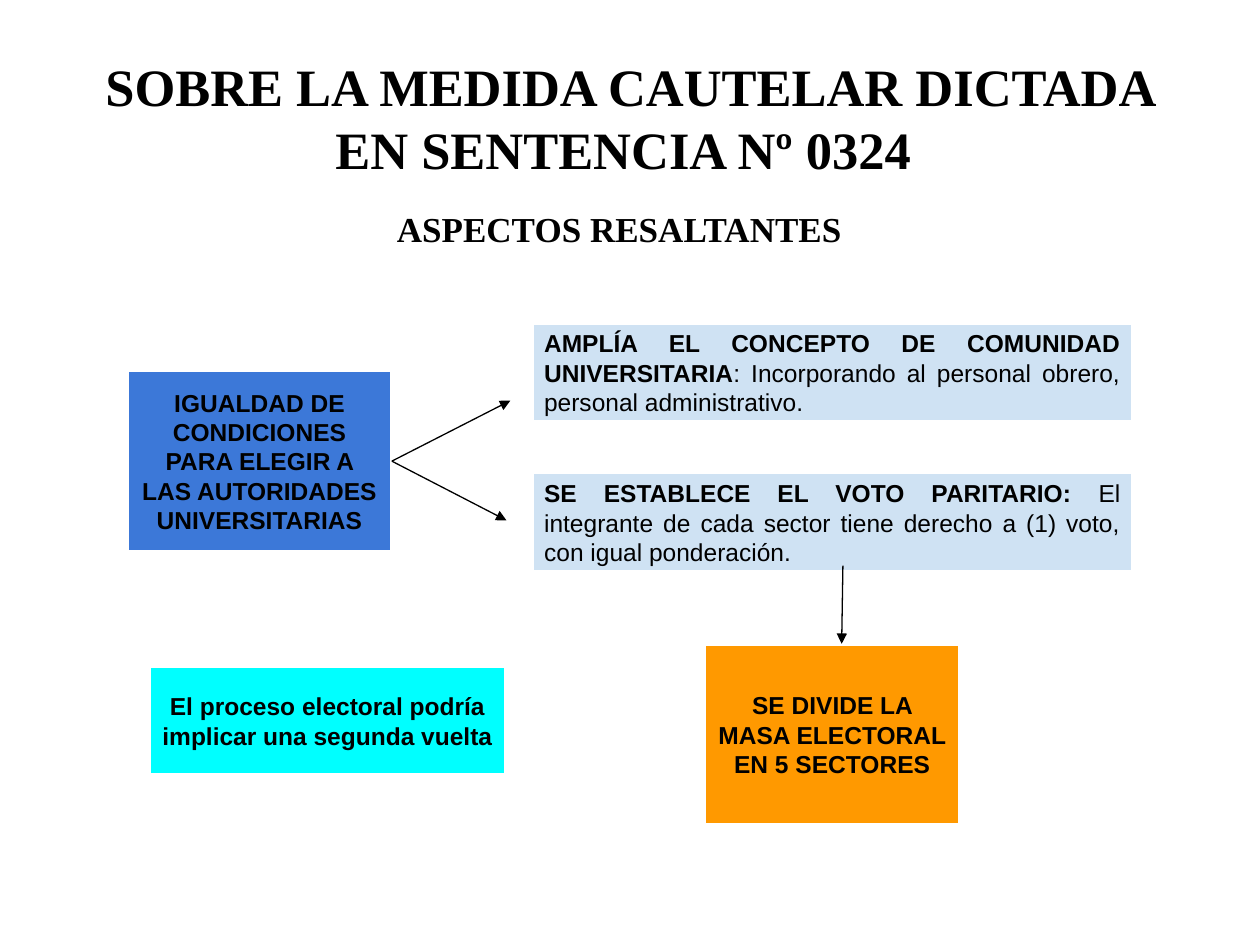
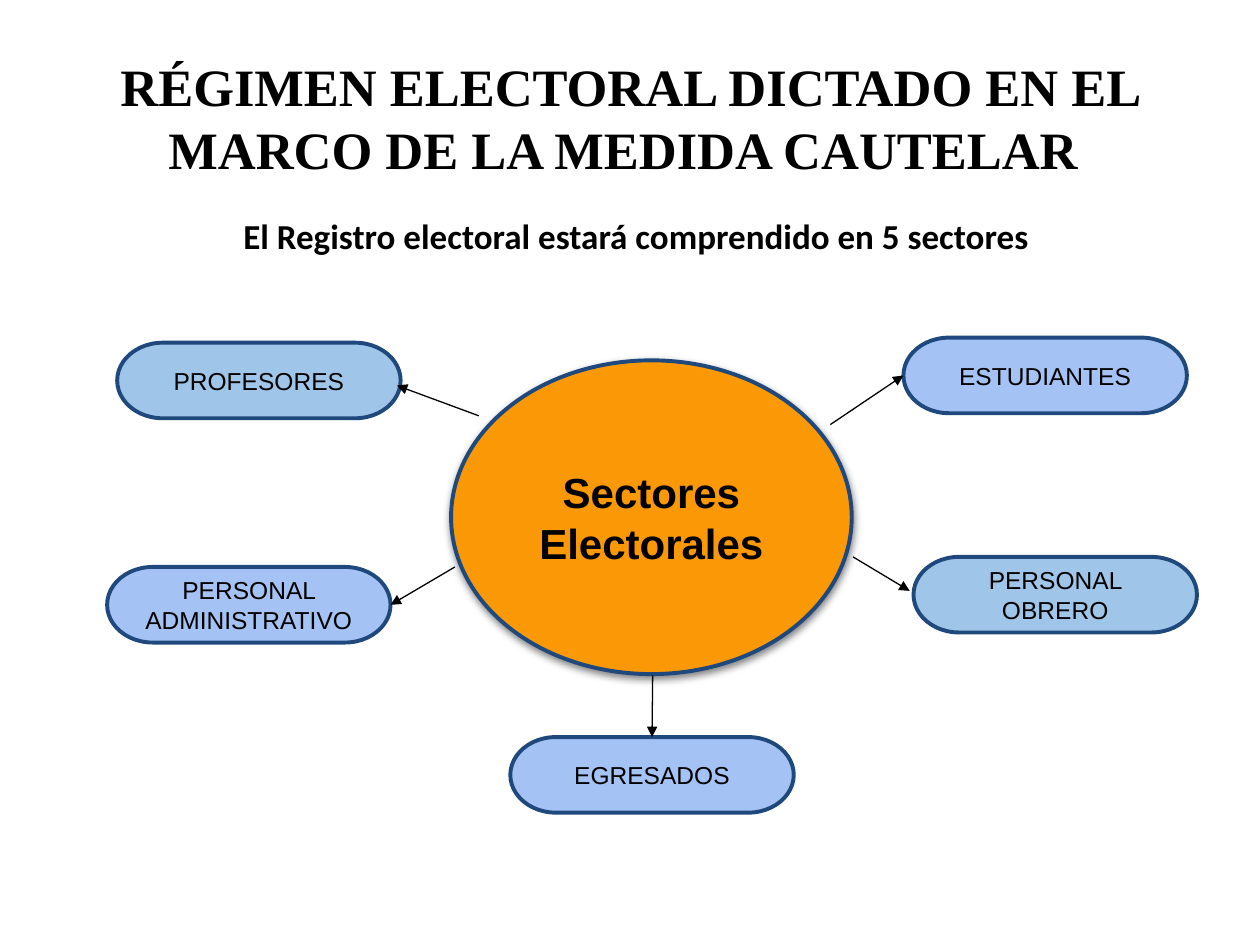
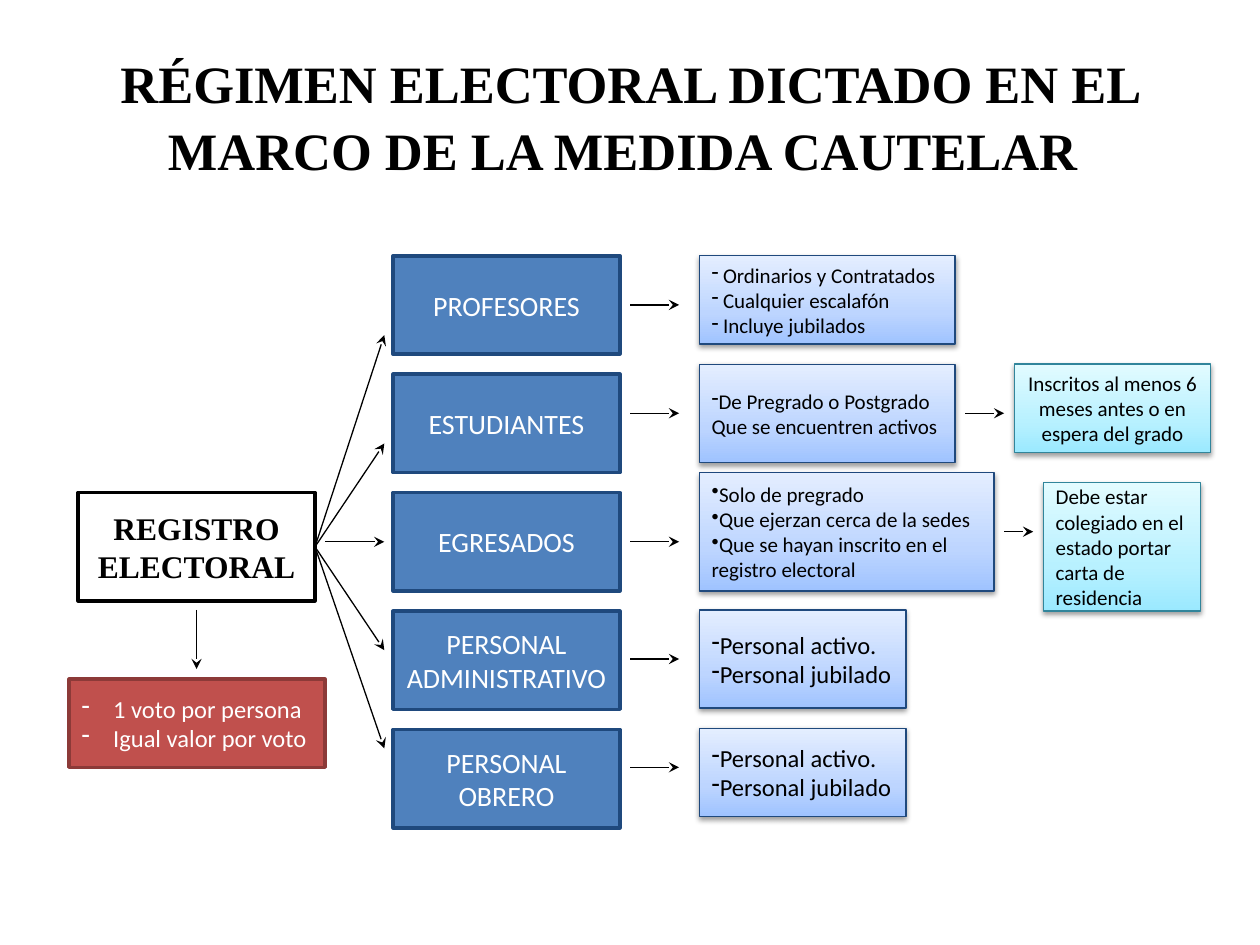
from collections import namedtuple
from dataclasses import dataclass

from lxml.etree import SubElement
from pptx import Presentation
from pptx.dml.color import RGBColor
from pptx.enum.shapes import MSO_CONNECTOR, MSO_SHAPE as Preset
from pptx.enum.text import MSO_ANCHOR as Anchor, PP_ALIGN as Align
from pptx.oxml.ns import qn
from pptx.util import Emu, Pt

PX = 9144  # 100 px to the inch
TOP, LEFT, BOTTOM, RIGHT = range(4)

Type = namedtuple("Type", "font size color bold")
Gradient = namedtuple("Gradient", "low middle high")
Shadow = namedtuple("Shadow", "alpha blur distance")
Bullet = namedtuple("Bullet", "sign margin indent")
Look = namedtuple("Look", "fill line weight shadow alpha", defaults=(None, 100))
Joint = namedtuple("Joint", "shape side")


@dataclass(frozen=True)
class Box:
    left: int
    top: int
    width: int
    height: int

    def inner(self, x, y, width, height):
        return Box(self.left + x, self.top + y, width, height)

    def point(self, x, y):
        return self.left + x, self.top + y

    def emu(self):
        return [Emu(n * PX) for n in (self.left, self.top, self.width, self.height)]


class Theme:
    black, white, navy = "000000", "FFFFFF", "1F497D"
    title = Type("Times New Roman", 30, black, True)
    title_end = title._replace(size=32)
    subtitle = title._replace(size=20)
    register = title._replace(size=18)
    strong = Type("Arial", 14, black, True)
    plain = strong._replace(bold=False)
    hub = strong._replace(size=24)
    lead = Type("Calibri", 20, black, True)
    sector = Type("Calibri", 16, white, False)
    vote = sector._replace(size=14)
    detail = Type("Calibri", 12, black, False)
    large_detail = detail._replace(size=14)

    equality = Look("3C78D8", white, 2.25)
    concept = Look("CFE2F3", white, 2.25)
    division = Look("FF9900", white, 2.25)
    runoff = Look("00FFFF", white, 2.25)
    sky = Look("9FC5E8", navy, 2.25)
    periwinkle = Look("A4C2F4", navy, 2.25)
    hub_look = Look("FF9900", navy, 2.25, Shadow(50, 4.5, 1.5), 96)
    register_look = Look(white, black, 2)
    sector_look = Look("4F81BD", navy, 2)
    vote_look = Look("C0504D", "8C3A38", 2)
    soft = Shadow(38, 3.1, 1.6)
    detail_look = Look(Gradient("9FC3FF", "BDD5FF", "E4EEFF"), navy, 0.75, soft)
    note_look = Look(Gradient("9BE9FF", "B8F1FF", "E2FBFF"), "31859B", 0.75, soft)

    dash = Bullet("-", 0, -8)
    spaced_dash = Bullet("-", 9, -9)
    large_dash = Bullet("-", 0, -10)
    vote_dash = Bullet("-", 25, -25)
    dot = Bullet("•", 0, -8)


def add_bullet(para, bullet, color):
    props = para._p.get_or_add_pPr()
    props.set("marL", str(bullet.margin * PX))
    props.set("indent", str(bullet.indent * PX))
    SubElement(SubElement(props, qn("a:buClr")), qn("a:srgbClr"), val=color)
    SubElement(props, qn("a:buChar"), char=bullet.sign)


def write(shape, paras, align=Align.CENTER, pad=10, anchor=Anchor.MIDDLE):
    """Fill a shape; each paragraph is (bullet or None, [(text, type), ...])."""
    frame = shape.text_frame
    frame.word_wrap = True
    frame.vertical_anchor = anchor
    frame.margin_left = frame.margin_right = Emu(10 * PX)
    frame.margin_top = frame.margin_bottom = Emu(pad * PX)
    for index, (bullet, runs) in enumerate(paras):
        para = frame.add_paragraph() if index else frame.paragraphs[0]
        para.alignment = align
        if bullet:
            add_bullet(para, bullet, runs[0][1].color)
        for text, kind in runs:
            span = para.add_run()
            span.text = text
            span.font.name, span.font.size = kind.font, Pt(kind.size)
            span.font.bold = kind.bold
            span.font.color.rgb = RGBColor.from_string(kind.color)


def one(text, kind):
    return [(None, [(text, kind)])]


def add_label(slide, box, paras, **options):
    write(slide.shapes.add_textbox(*box.emu()), paras, **options)


def paint(shape, look):
    props = shape._element.spPr
    if isinstance(look.fill, Gradient):
        shape.fill.gradient()
        shape.fill.gradient_angle = 90
        stops = props.find(qn("a:gradFill")).find(qn("a:gsLst"))
        stops.clear()
        for place, color in zip((0, 35, 100), look.fill):
            stop = SubElement(stops, qn("a:gs"), pos=str(place * 1000))
            SubElement(stop, qn("a:srgbClr"), val=color)
    else:
        shape.fill.solid()
        shape.fill.fore_color.rgb = RGBColor.from_string(look.fill)
        if look.alpha < 100:
            color = props.find(qn("a:solidFill")).find(qn("a:srgbClr"))
            SubElement(color, qn("a:alpha"), val=str(look.alpha * 1000))
    shape.line.color.rgb = RGBColor.from_string(look.line)
    shape.line.width = Pt(look.weight)
    shape.shadow.inherit = False
    if look.shadow:
        outer = SubElement(props.find(qn("a:effectLst")), qn("a:outerShdw"),
                           blurRad=str(Pt(look.shadow.blur)),
                           dist=str(Pt(look.shadow.distance)),
                           dir="5400000", algn="ctr", rotWithShape="0")
        color = SubElement(outer, qn("a:srgbClr"), val=Theme.black)
        SubElement(color, qn("a:alpha"), val=str(look.shadow.alpha * 1000))


def add_block(slide, box, look, paras, preset=Preset.RECTANGLE, **options):
    shape = slide.shapes.add_shape(preset, *box.emu())
    paint(shape, look)
    write(shape, paras, **options)
    return shape


def add_arrow(slide, start, end, head="triangle"):
    """Draw an arrow; each end is a point or a Joint on a shape's side."""
    points = [(0, 0) if isinstance(spot, Joint) else spot for spot in (start, end)]
    arrow = slide.shapes.add_connector(
        MSO_CONNECTOR.STRAIGHT, *[Emu(n * PX) for point in points for n in point])
    if isinstance(start, Joint):
        arrow.begin_connect(*start)
    if isinstance(end, Joint):
        arrow.end_connect(*end)
    arrow.line.color.rgb = RGBColor.from_string(Theme.black)
    arrow.line.width = Pt(0.75)
    SubElement(arrow.line._get_or_add_ln(), qn("a:tailEnd"), type=head)
    SubElement(arrow._element.spPr, qn("a:effectLst"))


def add_page(deck, *title_runs):
    slide = deck.slides.add_slide(deck.slide_layouts[6])
    add_label(slide, Box(50, 30, 900, 125), [(None, title_runs)], pad=5)
    return slide


def draw_equality(slide, box):
    equality = add_block(slide, box.inner(0, 38, 210, 144), Theme.equality, one(
        "IGUALDAD DE CONDICIONES PARA ELEGIR A LAS AUTORIDADES UNIVERSITARIAS",
        Theme.strong))
    concepts = [
        ("AMPLÍA EL CONCEPTO DE COMUNIDAD UNIVERSITARIA",
         ": Incorporando al personal obrero, personal administrativo.", (304, 62)),
        ("SE ESTABLECE EL VOTO PARITARIO: ",
         "El integrante de cada sector tiene derecho a (1) voto, con igual ponderación.",
         (301, 157)),
    ]
    for row, (heading, body, tip) in enumerate(concepts):
        add_block(slide, box.inner(321, 119 * row, 477, 79), Theme.concept,
                  [(None, [(heading, Theme.strong), (body, Theme.plain)])],
                  align=Align.JUSTIFY)
        add_arrow(slide, Joint(equality, RIGHT), box.point(*tip))


def draw_consequences(slide, box):
    add_block(slide, box.inner(441, 62, 203, 144), Theme.division,
              one("SE DIVIDE LA MASA ELECTORAL EN 5 SECTORES", Theme.strong))
    add_arrow(slide, box.point(551, 0), box.point(550, 62))
    add_block(slide, box.inner(0, 80, 284, 86), Theme.runoff,
              one("El proceso electoral podría implicar una segunda vuelta ", Theme.strong))


def draw_sector_wheel(slide, box):
    add_block(slide, box.inner(273, 18, 318, 249), Theme.hub_look,
              one("Sectores Electorales", Theme.hub), Preset.OVAL)
    # Each arrow ends at a point or at the middle of the sector's side.
    sectors = [
        ("EGRESADOS", (320, 317), Theme.periwinkle, (433, 268), TOP),
        ("PROFESORES", (8, 4), Theme.sky, (295, 62), (230, 38)),
        ("ESTUDIANTES", (632, 0), Theme.periwinkle, (574, 69), LEFT),
        ("PERSONAL OBRERO", (640, 174), Theme.sky, (592, 174), (637, 201)),
        ("PERSONAL ADMINISTRATIVO", (0, 182), Theme.periwinkle, (276, 182), RIGHT),
    ]
    for name, corner, look, start, end in sectors:
        sector = add_block(slide, box.inner(*corner, 225, 60), look,
                           one(name, Theme.plain), Preset.FLOWCHART_TERMINATOR)
        target = box.point(*end) if isinstance(end, tuple) else Joint(sector, end)
        add_arrow(slide, box.point(*start), target)


def draw_register(slide, box):
    register = add_block(slide, box.inner(7, 0, 188, 86), Theme.register_look,
                         one("REGISTRO ELECTORAL", Theme.register), pad=5)
    votes = ("1 voto por persona", "Igual valor por voto")
    add_block(slide, box.inner(0, 148, 203, 70), Theme.vote_look,
              [(Theme.vote_dash, [(vote, Theme.vote)]) for vote in votes],
              align=Align.LEFT, pad=5)
    add_arrow(slide, box.point(101, 93), box.point(101, 140), "stealth")
    return register


def draw_sectors(slide, box, register):
    """Stack the sectors and fan arrows out to them from the register."""
    sectors = [("PROFESORES", 63), ("ESTUDIANTES", 149), ("EGRESADOS", 227),
               ("PERSONAL ADMINISTRATIVO", 313), ("PERSONAL OBRERO", 391)]
    for row, (name, tip) in enumerate(sectors):
        add_block(slide, box.inner(0, 94 * row, box.width, 78), Theme.sector_look,
                  one(name, Theme.sector), pad=5)
        level = name == "EGRESADOS"
        start = box.point(-54, tip) if level else Joint(register, RIGHT)
        add_arrow(slide, start, box.point(-7, tip), "stealth")


def draw_details(slide, box):
    staff = [(Theme.large_dash, "Personal activo."),
             (Theme.large_dash, "Personal jubilado")]
    details = [
        (0, 203, 70, 39, Theme.detail, [
            (Theme.spaced_dash, "Ordinarios y Contratados"),
            (Theme.spaced_dash, "Cualquier escalafón"),
            (Theme.spaced_dash, "Incluye jubilados")]),
        (86, 203, 78, 125, Theme.detail, [
            (Theme.dash, "De Pregrado o Postgrado"),
            (None, "Que se encuentren activos")]),
        (172, 234, 94, 227, Theme.detail, [
            (Theme.dot, "Solo de pregrado"),
            (Theme.dot, "Que ejerzan cerca de la sedes"),
            (Theme.dot, "Que se hayan inscrito en el registro electoral")]),
        (281, 164, 78, 320, Theme.large_detail, staff),
        (375, 164, 70, 406, Theme.large_detail, staff),
    ]
    for top, width, height, level, kind, lines in details:
        add_block(slide, box.inner(0, top, width, height), Theme.detail_look,
                  [(bullet, [(text, kind)]) for bullet, text in lines],
                  align=Align.LEFT, pad=5)
        add_arrow(slide, box.point(-55, level), box.point(-16, level), "stealth")


def draw_notes(slide, box):
    add_block(slide, box.inner(39, 0, 156, 70), Theme.note_look, one(
        "Inscritos al menos 6 meses antes o en espera del grado", Theme.detail), pad=5)
    add_block(slide, box.inner(62, 94, 125, 102), Theme.note_look, one(
        "Debe estar colegiado en el estado portar carta de residencia", Theme.detail),
        align=Align.LEFT, pad=5)
    add_arrow(slide, box.point(0, 39), box.point(31, 39), "stealth")
    add_arrow(slide, box.point(31, 133), box.point(54, 133), "stealth")


def build_ruling(deck):
    slide = add_page(deck, ("SOBRE LA MEDIDA CAUTELAR DICTADA EN SENTENCIA Nº 0324 ",
                            Theme.title))
    add_label(slide, Box(76, 155, 831, 60),
              one("ASPECTOS RESALTANTES", Theme.subtitle), anchor=Anchor.TOP)
    draw_equality(slide, Box(101, 256, 798, 198))
    draw_consequences(slide, Box(118, 449, 644, 206))


REGIME = "RÉGIMEN ELECTORAL DICTADO EN EL MARCO DE LA MEDIDA CAUTELAR"


def build_wheel(deck):
    slide = add_page(deck, (REGIME + " ", Theme.title))
    add_label(slide, Box(161, 160, 694, 60),
              one("El Registro electoral estará comprendido en 5 sectores ", Theme.lead),
              anchor=Anchor.TOP)
    draw_sector_wheel(slide, Box(85, 268, 865, 377))


def build_register(deck):
    slide = add_page(deck, (REGIME, Theme.title), (" ", Theme.title_end))
    register = draw_register(slide, Box(55, 391, 203, 218))
    draw_sectors(slide, Box(312, 203, 180, 454), register)
    draw_details(slide, Box(555, 203, 234, 445))
    draw_notes(slide, Box(766, 289, 195, 196))


def main():
    deck = Presentation()
    deck.slide_width, deck.slide_height = Emu(1000 * PX), Emu(750 * PX)
    build_ruling(deck)
    build_wheel(deck)
    build_register(deck)
    deck.save("out.pptx")


if __name__ == "__main__":
    main()
